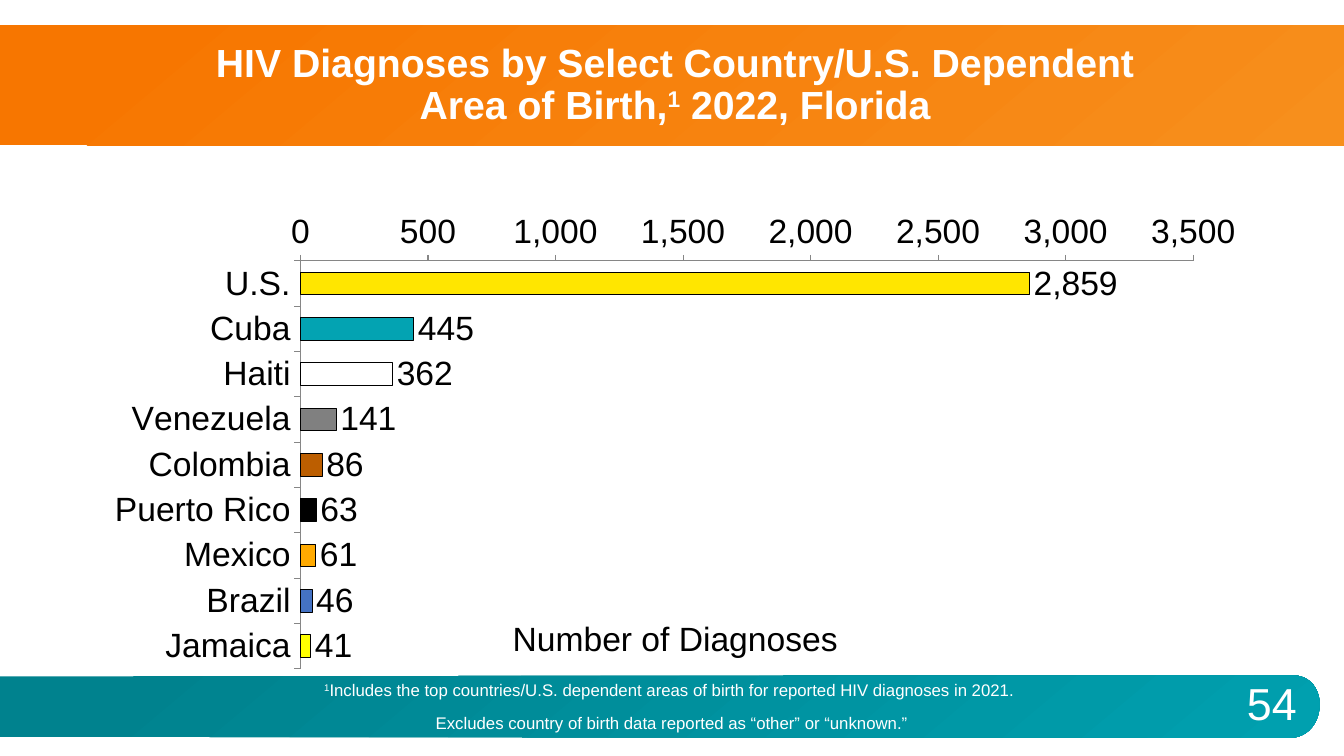
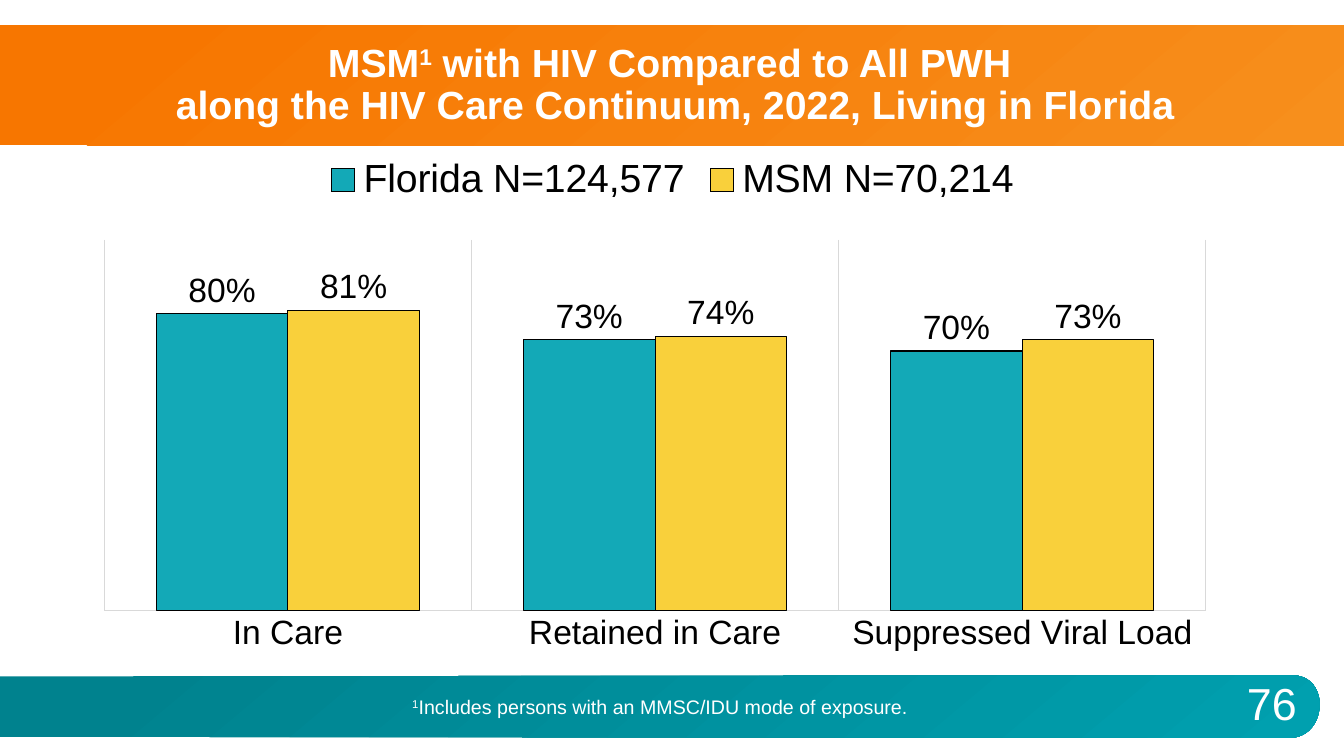
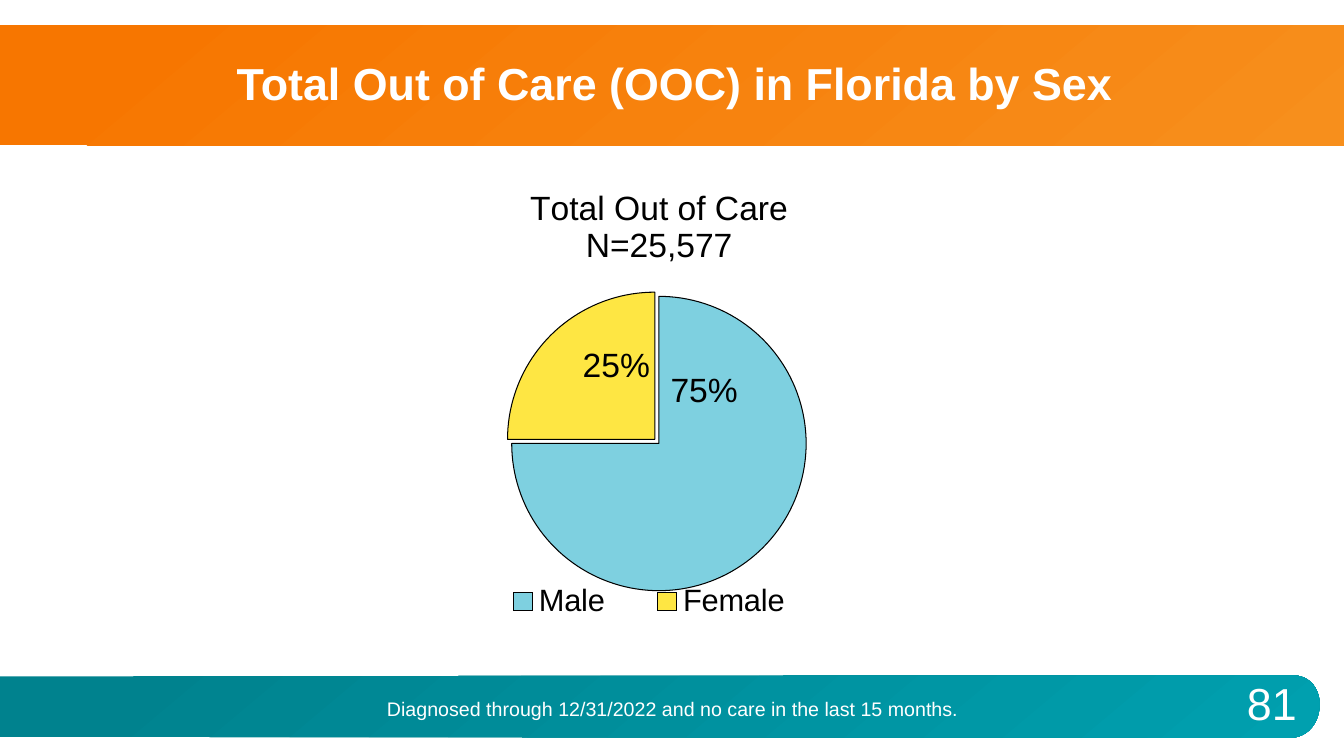
from lxml.etree import SubElement
from pptx import Presentation
from pptx.chart.data import CategoryChartData
from pptx.dml.color import RGBColor
from pptx.enum.chart import XL_CHART_TYPE, XL_LABEL_POSITION, XL_LEGEND_POSITION, XL_TICK_MARK
from pptx.enum.shapes import MSO_SHAPE
from pptx.enum.text import MSO_ANCHOR, MSO_AUTO_SIZE, PP_ALIGN
from pptx.oxml.ns import qn
from pptx.oxml.xmlchemy import OxmlElement
from pptx.util import Inches, Pt

FONT = "Arial"
WHITE = RGBColor(0xFF, 0xFF, 0xFF)
BLACK = RGBColor(0x00, 0x00, 0x00)
DARK_TEAL = RGBColor(0x00, 0x82, 0x8E)
TEAL = RGBColor(0x00, 0xA0, 0xAF)
DARK_ORANGE = RGBColor(0xF7, 0x76, 0x00)
ORANGE = RGBColor(0xF7, 0x8F, 0x1C)
AXIS_GRAY = RGBColor(0x86, 0x86, 0x86)
GRID_GRAY = RGBColor(0xD9, 0xD9, 0xD9)
FLORIDA_TEAL = RGBColor(0x13, 0xA9, 0xB7)
MSM_YELLOW = RGBColor(0xF9, 0xD0, 0x3B)
MALE_BLUE = RGBColor(0x7E, 0xD0, 0xE0)
FEMALE_YELLOW = RGBColor(0xFE, 0xE6, 0x43)
COUNTRIES = [
    ("U.S.", 2859, RGBColor(0xFF, 0xE6, 0x00)),
    ("Cuba", 445, RGBColor(0x03, 0xA3, 0xB2)),
    ("Haiti", 362, WHITE),
    ("Venezuela", 141, RGBColor(0x80, 0x80, 0x80)),
    ("Colombia", 86, RGBColor(0xBC, 0x5E, 0x00)),
    ("Puerto Rico", 63, BLACK),
    ("Mexico", 61, RGBColor(0xFF, 0xAA, 0x00)),
    ("Brazil", 46, RGBColor(0x44, 0x72, 0xC4)),
    ("Jamaica", 41, RGBColor(0xFF, 0xFF, 0x00)),
]
RAISED_ONE = ("1", True)
EDGE = (("xMode", "edge"), ("yMode", "edge"))
INNER = (("layoutTarget", "inner"), *EDGE)


def style_font(font, size, color=BLACK, bold=False):
    font.name, font.size, font.bold = FONT, Pt(size), bold
    font.color.rgb = color


def add_spans(paragraph, spans, size, color=BLACK, bold=False):
    """Add (text, raised) spans; a newline in the text becomes a line break."""
    for text, raised in spans:
        for number, line in enumerate(text.split("\n")):
            if number:
                paragraph.add_line_break()
            span = paragraph.add_run()
            span.text = line
            style_font(span.font, size, color, bold)
            if raised:
                span.font._element.set("baseline", "30000")


def fill_gradient(shape, first, last):
    shape.shadow.inherit = False
    shape.line.fill.background()
    shape.fill.gradient()
    shape.fill.gradient_angle = 310
    for stop, position, color in zip(shape.fill.gradient_stops, (0.09, 1), (first, last)):
        stop.position = position
        stop.color.rgb = color


def set_line(line, color):
    line.color.rgb = color
    line.width = Pt(0.75)


def paint(part, color):
    part.format.fill.solid()
    part.format.fill.fore_color.rgb = color
    set_line(part.format.line, BLACK)


def set_layout(parent, index, modes=(), **lengths):
    """Give a chart part a manual layout in fractions of the chart."""
    layout = parent.find(qn("c:layout"))
    if layout is None:
        layout = OxmlElement("c:layout")
        parent.insert(index, layout)
    manual = SubElement(layout, qn("c:manualLayout"))
    for tag, value in (*modes, *lengths.items()):
        SubElement(manual, qn(f"c:{tag}")).set("val", str(value))


def place_plot(chart, x, y, w, h):
    set_layout(chart._chartSpace.chart.plotArea, 0, INNER, x=x, y=y, w=w, h=h)


def label_values(series, number_format):
    labels = series.data_labels
    labels.show_value = True
    labels.position = XL_LABEL_POSITION.OUTSIDE_END
    labels.number_format = number_format
    labels.number_format_is_linked = False
    style_font(labels.font, 24)


class Deck:
    """Holds the presentation, its style and the current page."""

    def __init__(self):
        self.deck = Presentation()
        self.deck.slide_width, self.deck.slide_height = Inches(13.33), Inches(7.5)
        self.page = None

    def start_page(self, number, title, title_size=28):
        self.page = self.deck.slides.add_slide(self.deck.slide_layouts[1])
        self.add_bands()
        box = self.page.shapes.title
        self.place(box, 0.74, 0.26, 11.91, 1.18)
        self.fill_box(box, [title], title_size, MSO_ANCHOR.MIDDLE, bold=True)
        number_box = self.page.shapes.add_textbox(
            Inches(12.07), Inches(6.68), Inches(1.09), Inches(0.59))
        self.fill_box(number_box, [[(str(number), False)]], 32, MSO_ANCHOR.MIDDLE, spacing=1)

    def add_bands(self):
        """Draw the title and footer bands behind the placeholders."""
        shapes = self.page.shapes
        title_band = shapes.add_shape(
            MSO_SHAPE.RECTANGLE, 0, Inches(0.25), Inches(13.33), Inches(1.19))
        fill_gradient(title_band, DARK_ORANGE, ORANGE)
        curve = ((12.8, 6.7), (13.2, 6.68), (13.17, 7.31), (12.8, 7.32))
        steps = 24
        points = []
        for step in range(steps + 1):
            t = step / steps
            weights = ((1 - t) ** 3, 3 * t * (1 - t) ** 2, 3 * t * t * (1 - t), t ** 3)
            points.append(tuple(
                Inches(sum(weight * point[axis] for weight, point in zip(weights, curve)))
                for axis in (0, 1)))
        points += [(0, Inches(7.31)), (0, Inches(6.71))]
        outline = shapes.build_freeform(*points[0])
        outline.add_line_segments(points[1:], close=True)
        footer_band = outline.convert_to_shape()
        fill_gradient(footer_band, DARK_TEAL, TEAL)
        for band in (title_band, footer_band):
            shapes.element.insert(2, band._element)

    def place(self, box, left, top, width, height):
        box.left, box.top = Inches(left), Inches(top)
        box.width, box.height = Inches(width), Inches(height)

    def fill_box(self, box, paragraphs, size, anchor, bold=False, spacing=0.9):
        frame = box.text_frame
        frame.word_wrap = True
        frame.auto_size = MSO_AUTO_SIZE.NONE
        frame.vertical_anchor = anchor
        for number, spans in enumerate(paragraphs):
            paragraph = frame.add_paragraph() if number else frame.paragraphs[0]
            properties = paragraph._p.get_or_add_pPr()
            properties.set("marL", "0")
            properties.set("indent", "0")
            SubElement(properties, qn("a:buNone"))
            paragraph.alignment = PP_ALIGN.CENTER
            paragraph.line_spacing = spacing
            paragraph.space_before = Pt(10 if number else 0)
            add_spans(paragraph, spans, size, WHITE, bold)

    def add_footnote(self, paragraphs, size, left, top, width, height):
        box = self.page.placeholders[1]
        self.place(box, left, top, width, height)
        self.fill_box(box, paragraphs, size, MSO_ANCHOR.TOP)

    def add_chart(self, kind, place, categories, series, number_format="General"):
        data = CategoryChartData(number_format=number_format)
        data.categories = categories
        for name, values in series:
            data.add_series(name, values)
        chart = self.page.shapes.add_chart(kind, *map(Inches, place), data).chart
        style_font(chart.font, 24)
        chart.has_title = False
        chart.has_legend = False
        chart.plots[0].vary_by_categories = False
        return chart

    def add_legend(self, chart, position, size):
        chart.has_legend = True
        chart.legend.position = position
        chart.legend.include_in_layout = False
        style_font(chart.legend.font, size)

    def add_country_bars(self):
        names, counts, colors = zip(*COUNTRIES)
        chart = self.add_chart(XL_CHART_TYPE.BAR_CLUSTERED, (0.91, 1.31, 11.5, 5.33),
                               names, [("Series 1", counts)], "#,##0")
        place_plot(chart, 0.18, 0.24, 0.77, 0.76)
        plot = chart.plots[0]
        plot.gap_width = 100
        bars = plot.series[0]
        for number, color in enumerate(colors):
            paint(bars.points[number], color)
        label_values(bars, "#,##0")
        chart.category_axis.reverse_order = True
        counts_axis = chart.value_axis
        for axis in (chart.category_axis, counts_axis):
            axis.has_major_gridlines = False
            axis.major_tick_mark = XL_TICK_MARK.OUTSIDE
            set_line(axis.format.line, AXIS_GRAY)
            style_font(axis.tick_labels.font, 24)
        counts_axis.minimum_scale, counts_axis.maximum_scale = 0, 3500
        counts_axis.major_unit = 500
        counts_axis.tick_labels.number_format = "#,##0"
        counts_axis.tick_labels.number_format_is_linked = False
        heading = counts_axis.axis_title.text_frame.paragraphs[0]
        add_spans(heading, [("Number of Diagnoses", False)], 24)

    def add_care_columns(self):
        chart = self.add_chart(
            XL_CHART_TYPE.COLUMN_CLUSTERED, (0.92, 1.42, 11.5, 5.33),
            ["In Care", "Retained in Care", "Suppressed Viral Load "],
            [("Florida N=124,577", (0.8, 0.73, 0.7)), ("MSM N=70,214", (0.81, 0.74, 0.73))],
            "0%")
        place_plot(chart, 0.01, 0.18, 0.95, 0.69)
        plot = chart.plots[0]
        plot.gap_width = 79
        for columns, color in zip(plot.series, (FLORIDA_TEAL, MSM_YELLOW)):
            paint(columns, color)
            label_values(columns, "0%")
        stages = chart.category_axis
        stages.major_tick_mark = XL_TICK_MARK.NONE
        stages.has_major_gridlines = True
        set_line(stages.major_gridlines.format.line, GRID_GRAY)
        set_line(stages.format.line, GRID_GRAY)
        style_font(stages.tick_labels.font, 24)
        shares = chart.value_axis
        shares.visible = False
        shares.has_major_gridlines = False
        shares.minimum_scale, shares.maximum_scale = 0, 1
        self.add_legend(chart, XL_LEGEND_POSITION.TOP, 28)

    def add_sex_pie(self):
        chart = self.add_chart(XL_CHART_TYPE.PIE, (3.13, 1.52, 6.77, 5.2),
                               ["Male ", "Female "], [("Series 1", (75, 25))])
        place_plot(chart, 0.28, 0.26, 0.44, 0.58)
        chart.has_title = True
        heading = chart.chart_title.text_frame.paragraphs[0]
        add_spans(heading, [("Total Out of Care\nN=25,577", False)], 24)
        set_layout(chart.chart_title._element, 1, EDGE, x=0.31, y=0.06)
        self.add_legend(chart, XL_LEGEND_POSITION.BOTTOM, 22)
        set_layout(chart.legend._element, 1, EDGE, x=0.24, y=0.81, w=0.51, h=0.09)
        chart.plots[0].vary_by_categories = True
        slices = chart.plots[0].series[0]
        set_line(slices.format.line, BLACK)
        explosion = OxmlElement("c:explosion")
        explosion.set("val", "2")
        slices._element.get_or_add_spPr().addnext(explosion)
        offsets = ((-0.01, -0.2), (0.02, -0.04))
        for number, (color, (x, y)) in enumerate(zip((MALE_BLUE, FEMALE_YELLOW), offsets)):
            point = slices.points[number]
            paint(point, color)
            style_font(point.data_label.font, 24)
            point.data_label.position = XL_LABEL_POSITION.CENTER
            label = slices._element.find(qn("c:dLbls")).findall(qn("c:dLbl"))[number]
            label.find(qn("c:showVal")).set("val", "0")
            label.find(qn("c:showPercent")).set("val", "1")
            set_layout(label, 1, x=x, y=y)


def main():
    deck = Deck()
    deck.start_page(54, [
        ("HIV Diagnoses by Select Country/U.S. Dependent\nArea of Birth,", False),
        RAISED_ONE, (" 2022, Florida", False)])
    deck.add_country_bars()
    deck.add_footnote([
        [RAISED_ONE, ("Includes the top countries/U.S. dependent areas of birth for "
                      "reported HIV diagnoses in 2021. ", False)],
        [("Excludes country of birth data reported as “other” or “unknown.”", False)],
    ], 12, 0.71, 6.72, 11.91, 0.52)

    deck.start_page(76, [
        ("MSM", False), RAISED_ONE,
        (" with HIV Compared to All PWH \n"
         "along the HIV Care Continuum, 2022, Living in Florida", False)])
    deck.add_care_columns()
    deck.add_footnote([
        [RAISED_ONE, ("Includes persons with an MMSC/IDU mode of exposure. ", False)],
    ], 14, 0.74, 6.87, 11.67, 0.35)

    deck.start_page(81, [("Total Out of Care (OOC) in Florida by Sex", False)], 32)
    deck.add_sex_pie()
    deck.add_footnote([
        [("Diagnosed through 12/31/2022 and no care in the last 15 months. ", False)],
    ], 14, 0.95, 6.89, 11.5, 0.35)

    deck.deck.save("out.pptx")


if __name__ == "__main__":
    main()
